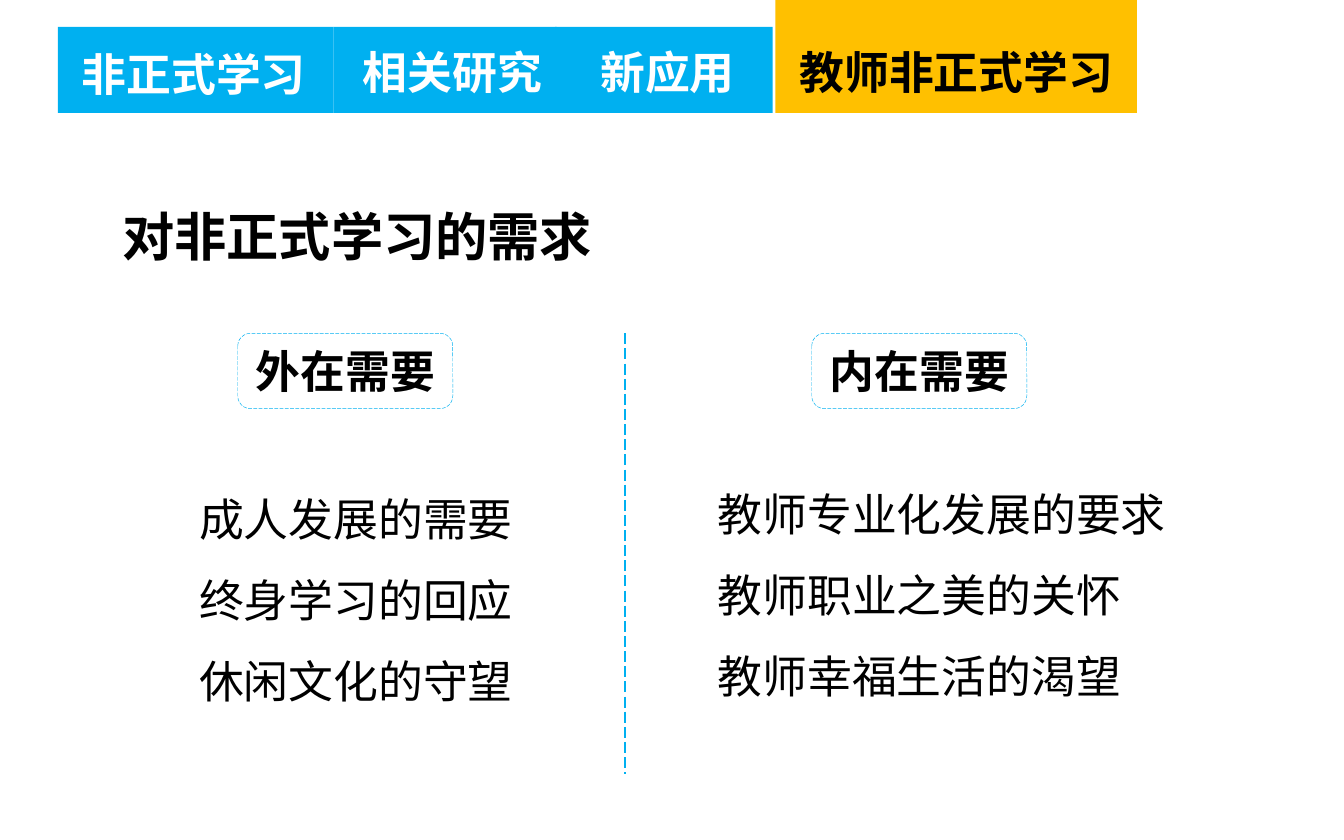
from pptx import Presentation
from pptx.dml.color import RGBColor
from pptx.enum.dml import MSO_LINE_DASH_STYLE as DASH
from pptx.enum.shapes import MSO_CONNECTOR as CONNECTOR, MSO_SHAPE as SHAPE
from pptx.enum.text import MSO_ANCHOR as ANCHOR, MSO_AUTO_SIZE as AUTO, PP_ALIGN as ALIGN
from pptx.oxml.ns import qn
from pptx.util import Pt
from lxml.etree import SubElement

FONT = "Noto Sans CJK SC"
BLUE, GOLD, WHITE, BLACK = "00B0F0", "FFC000", "FFFFFF", "000000"

# label, tab left, top, width, label left, label top, fill, font colour
TABS = [
    ("非正式学习", 31, 14.4, 147.6, 36.7, 21.6, BLUE, WHITE),
    ("相关研究", 178.6, 14.4, 119.6, 187.2, 20.2, BLUE, WHITE),
    ("新应用", 297.4, 14.4, 116.6, 314.6, 20.2, BLUE, WHITE),
    ("教师非正式学习", 415.4, -0.7, 193.7, 421.2, 20.2, GOLD, BLACK),
]
TAB_BOTTOM = 60.5
TITLE = "对非正式学习的需求"
# heading, heading left, list left, list top, list width, items
NEEDS = [
    ("外在需要", 127.4, 99.4, 245.5, 184.3,
     ["成人发展的需要", "终身学习的回应", "休闲文化的守望"]),
    ("内在需要", 434.9, 377.3, 242.6, 257,
     ["教师专业化发展的要求", "教师职业之美的关怀", "教师幸福生活的渴望"]),
]
NEEDS_TOP = 178.6


def rgb(value):
    return RGBColor.from_string(value)


def place(shape, *box):
    for name, value in zip(("left", "top", "width", "height"), box):
        setattr(shape, name, Pt(value))


def write(shape, lines, size=24, bold=True, color=BLACK, align=ALIGN.LEFT,
          anchor=ANCHOR.MIDDLE, spacing=1.0):
    tf = shape.text_frame
    frame = dict(auto_size=AUTO.NONE, word_wrap=False, vertical_anchor=anchor,
                 margin_left=Pt(7.2), margin_right=Pt(7.2),
                 margin_top=0, margin_bottom=0)
    for name, value in frame.items():
        setattr(tf, name, value)
    for i, line in enumerate(lines):
        p = tf.add_paragraph() if i else tf.paragraphs[0]
        for name, value in dict(alignment=align, line_spacing=spacing,
                                space_before=Pt(0), space_after=Pt(0)).items():
            setattr(p, name, value)
        pPr = p._p.get_or_add_pPr()
        pPr.set("marL", "0")
        pPr.set("indent", "0")
        SubElement(pPr, qn("a:buNone"))
        r = p.add_run()
        r.text = line
        for name, value in dict(size=Pt(size), bold=bold, name=FONT).items():
            setattr(r.font, name, value)
        r.font.color.rgb = rgb(color)
        SubElement(r._r.get_or_add_rPr(), qn("a:ea")).set("typeface", FONT)


def add_box(s, kind, box, fill):
    sp = s.shapes.add_shape(kind, *map(Pt, box))
    sp.shadow.inherit = False
    sp.fill.solid()
    sp.fill.fore_color.rgb = rgb(fill)
    sp.line.fill.background()
    return sp


def dash(line, width):
    line.color.rgb = rgb(BLUE)
    line.width = Pt(width)
    line.dash_style = DASH.LONG_DASH


prs = Presentation()
prs.slide_width, prs.slide_height = Pt(720), Pt(450)
s = prs.slides.add_slide(prs.slide_layouts[3])

for label, left, top, width, text_left, text_top, fill, color in TABS:
    add_box(s, SHAPE.RECTANGLE, (left, top, width, TAB_BOTTOM - top), fill)
    text_box = s.shapes.add_textbox(
        Pt(text_left), Pt(text_top), Pt(24 * len(label) + 14.4), Pt(36))
    write(text_box, [label], color=color)

place(s.shapes.title, 58.3, 105.8, 269.3, 41)
write(s.shapes.title, [TITLE], size=28)

divider = s.shapes.add_connector(
    CONNECTOR.STRAIGHT, Pt(334.8), Pt(NEEDS_TOP), Pt(334.8), Pt(414.7))
dash(divider.line, 0.75)
SubElement(divider._element.spPr, qn("a:effectLst"))

for idx, (heading, pill_left, left, top, width, items) in enumerate(NEEDS, 1):
    pill = add_box(s, SHAPE.ROUNDED_RECTANGLE,
                   (pill_left, NEEDS_TOP, 115.2, 40.3), WHITE)
    dash(pill.line, 0.25)
    write(pill, [heading], align=ALIGN.CENTER)
    body = s.placeholders[idx]
    place(body, left, top + 3.6, width, 134.6)
    write(body, items, bold=False, anchor=ANCHOR.TOP, spacing=Pt(43.3))

prs.save("out.pptx")
